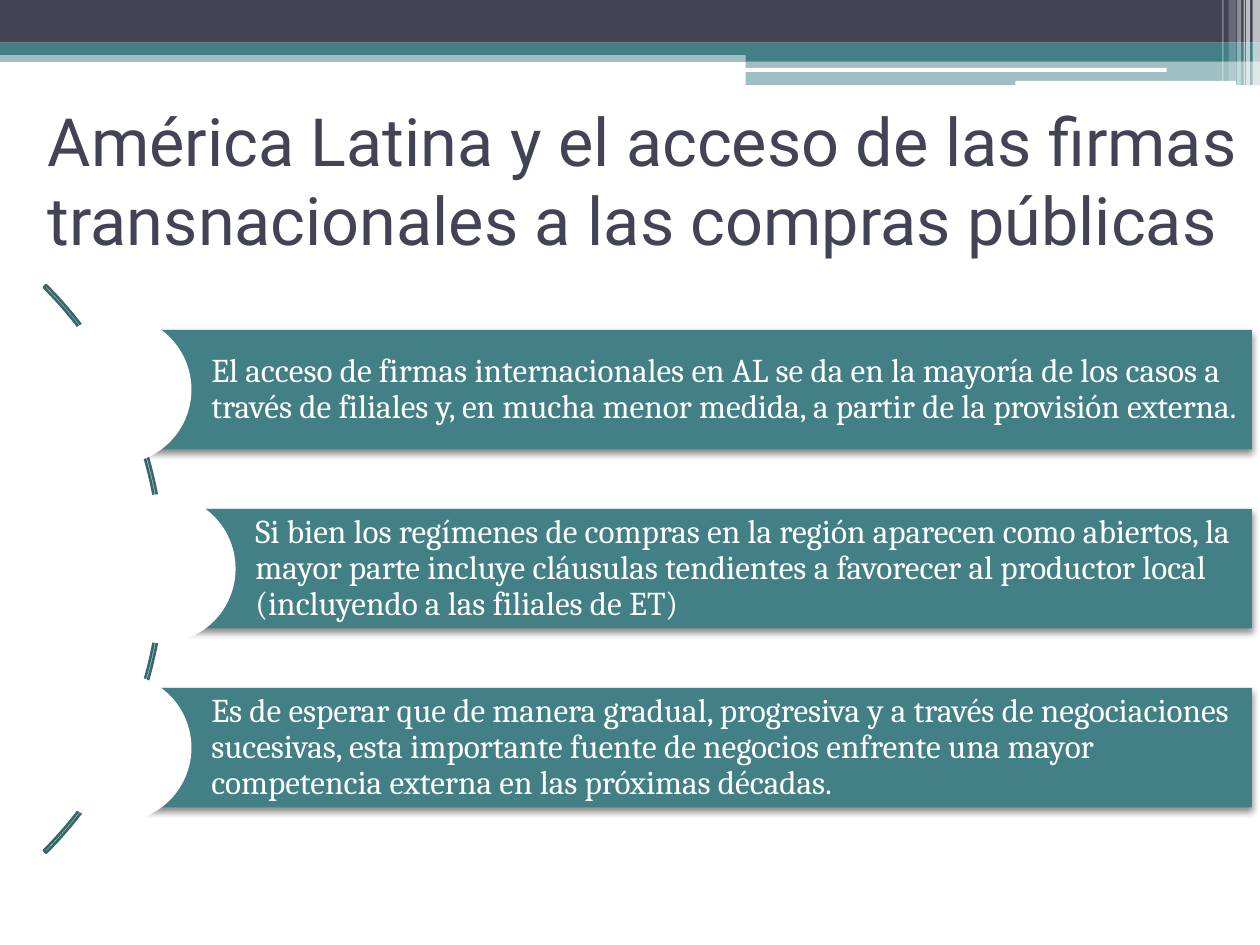
"""Build the slide on access of transnational firms to public procurement in Latin America."""
import lxml.etree
import pptx
import pptx.dml.color
import pptx.enum.shapes
import pptx.enum.text
import pptx.oxml.ns
import pptx.util

Cm = pptx.util.Cm
Pt = pptx.util.Pt
RGB = pptx.dml.color.RGBColor.from_string
MSO = pptx.enum.shapes.MSO_SHAPE
qn = pptx.oxml.ns.qn


class Theme:
    dark = "424456"
    teal = "438086"
    arc = "36676B"
    white = "FFFFFF"
    shadow = "000000"
    title_font = "Roboto"
    body_font = "Cambria"
    title_size = Pt(38)
    body_size = Pt(19)


def add_filled(s, kind, box, color, alpha=100):
    sp = s.shapes.add_shape(kind, *[Cm(v) for v in box])
    sp.shadow.inherit = False
    sp.line.fill.background()
    sp.fill.solid()
    sp.fill.fore_color.rgb = RGB(color)
    if alpha < 100:
        clr = sp.fill._xPr.find(".//" + qn("a:srgbClr"))
        lxml.etree.SubElement(clr, qn("a:alpha"), val=str(alpha * 1000))
    return sp


def format_text(tf, font, size, color):
    tf.word_wrap = True
    tf.auto_size = pptx.enum.text.MSO_AUTO_SIZE.NONE
    tf.vertical_anchor = pptx.enum.text.MSO_ANCHOR.MIDDLE
    p = tf.paragraphs[0]
    p.alignment = pptx.enum.text.PP_ALIGN.LEFT
    for r in p.runs:
        r.font.name = font
        r.font.size = size
        r.font.color.rgb = RGB(color)
    return p


prs = pptx.Presentation()
prs.slide_width = Cm(25.4)
prs.slide_height = Cm(19.05)
s = prs.slides.add_slide(prs.slide_layouts[5])

header = [
    (MSO.RECTANGLE, (0, 1.02, 25.4, 0.23), Theme.teal, 50),
    (MSO.RECTANGLE, (0, 0, 25.4, 0.86), Theme.dark, 100),
    (MSO.RECTANGLE, (0, 0.86, 25.4, 0.25), Theme.teal, 100),
    (MSO.RECTANGLE, (15.03, 0.99, 10.37, 0.25), Theme.teal, 100),
    (MSO.RECTANGLE, (15.03, 1.24, 10.37, 0.48), Theme.teal, 50),
    (MSO.ROUNDED_RECTANGLE, (15.01, 1.37, 8.51, 0.08), Theme.white, 100),
    (MSO.ROUNDED_RECTANGLE, (20.47, 1.63, 4.45, 0.1), Theme.white, 100),
]
for kind, box, color, alpha in header:
    add_filled(s, kind, box, color, alpha)

stripes = [
    (25.25, 0.15, 1.73, 65),
    (25.12, 0.08, 1.73, 65),
    (25.07, 0.03, 1.73, 60),
    (24.94, 0.08, 1.73, 40),
    (24.77, 0.15, 1.63, 20),
    (24.64, 0.03, 1.63, 30),
]
for left, width, height, alpha in stripes:
    add_filled(s, MSO.RECTANGLE, (left, 0, width, height), Theme.white, alpha)

title = s.shapes.title
title.left, title.top, title.width, title.height = Cm(0.71), Cm(2.13), Cm(24.69), Cm(2.97)
title.text_frame.text = "América Latina y el acceso de las firmas transnacionales a las compras públicas"
format_text(title.text_frame, Theme.title_font, Theme.title_size, Theme.dark)

arc = add_filled(s, MSO.BLOCK_ARC, (-12.88, 3.38, 16.18, 16.18), Theme.white)
arc.fill.background()
arc.line.color.rgb = RGB(Theme.arc)
arc.line.width = Pt(1.5)
for i, value in enumerate((189, 27, 0.004)):
    arc.adjustments[i] = value

points = [
    (2.36, "El acceso de firmas internacionales en AL se da en la mayoría de los casos a través de "
           "filiales y, en mucha menor medida, a partir de la provisión externa."),
    (3.25, "Si bien los regímenes de compras en la región aparecen como abiertos, la mayor parte incluye "
           "cláusulas tendientes a favorecer al productor local (incluyendo a las filiales de ET)"),
    (2.36, "Es de esperar que de manera gradual, progresiva y a través de negociaciones sucesivas, esta "
           "importante fuente de negocios enfrente una mayor competencia externa en las próximas décadas."),
]
bar_right, bar_top, bar_height, pitch, diameter = 25.24, 6.65, 2.41, 3.61, 3
for i, (left, text) in enumerate(points):
    top = bar_top + i * pitch
    bar = add_filled(s, MSO.RECTANGLE, (left, top, bar_right - left, bar_height), Theme.teal)
    effects = bar._element.spPr.find(qn("a:effectLst"))
    shadow = lxml.etree.SubElement(effects, qn("a:outerShdw"), blurRad=str(Pt(4)), dist=str(Pt(2)),
                                   dir="5400000", rotWithShape="0")
    clr = lxml.etree.SubElement(shadow, qn("a:srgbClr"), val=Theme.shadow)
    lxml.etree.SubElement(clr, qn("a:alpha"), val="45000")
    tf = bar.text_frame
    tf.text = text
    tf.margin_left = Cm(1.9)
    tf.margin_top = tf.margin_right = tf.margin_bottom = Cm(0.13)
    p = format_text(tf, Theme.body_font, Theme.body_size, Theme.white)
    p.line_spacing = 0.9
    circle_top = top + (bar_height - diameter) / 2
    add_filled(s, MSO.OVAL, (left - diameter / 2, circle_top, diameter, diameter), Theme.white)

prs.save("out.pptx")
